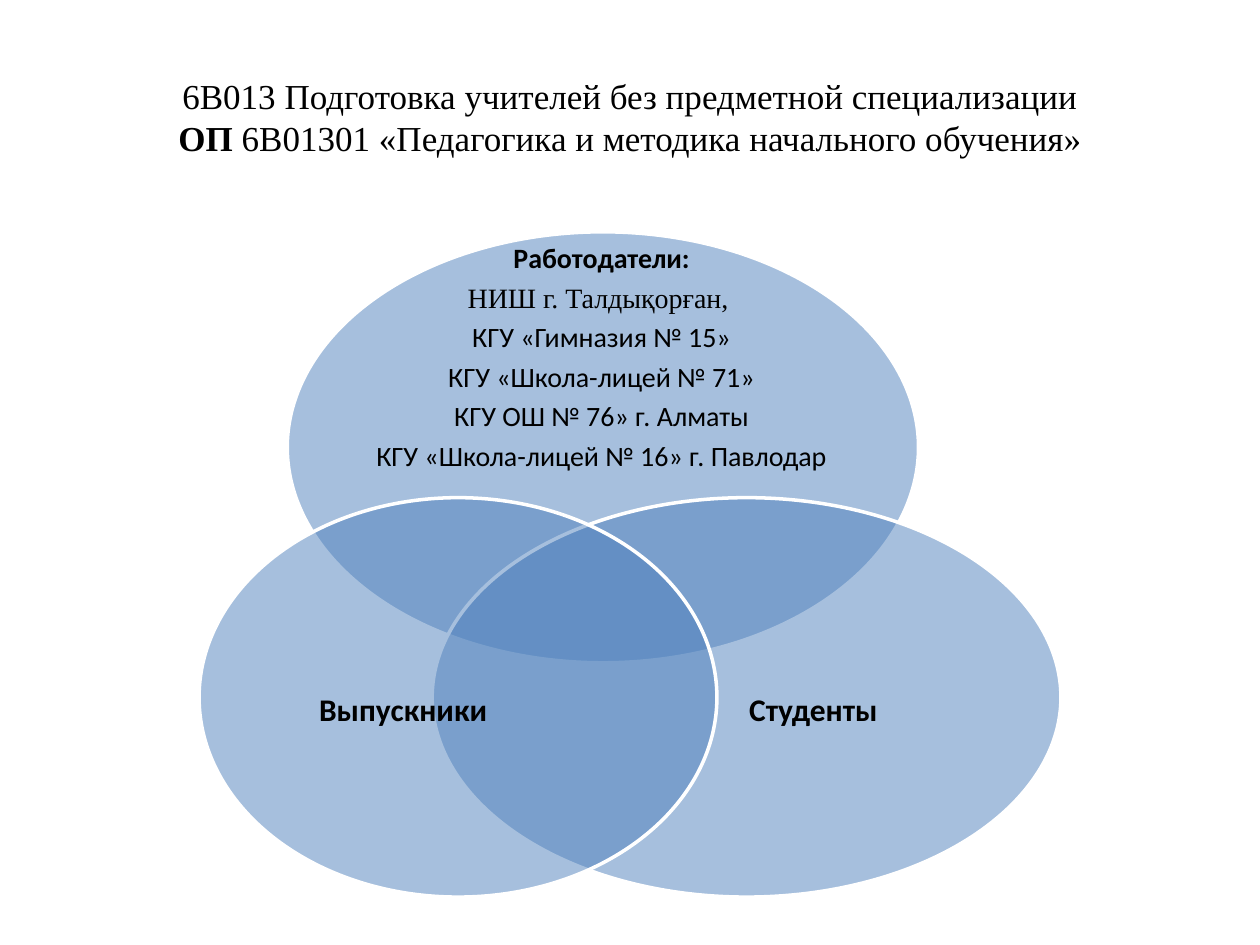
import pptx
import pptx.util
import pptx.dml.color
import pptx.enum.shapes
import pptx.enum.text
import pptx.oxml
from dataclasses import dataclass
from pptx.oxml import ns

PX = 9144  # EMU per px, 100 px to the inch
MIDDLE = pptx.enum.text.MSO_ANCHOR.MIDDLE
TOP = pptx.enum.text.MSO_ANCHOR.TOP


@dataclass(frozen=True)
class Theme:
    text: str = "000000"
    circle: str = "4F81BD"
    outline: str = "FFFFFF"
    opacity: int = 50
    outline_pt: int = 2
    title_font: str = "Times New Roman"
    body_font: str = "Calibri"
    title_pt: int = 20
    list_pt: int = 16
    label_pt: int = 18
    line_spacing: float = 0.9
    space_after_pt: float = 5.3


THEME = Theme()

EMPLOYERS = [
    ("Работодатели:", THEME.body_font, True),
    ("НИШ г. Талдықорған, ", THEME.title_font, False),
    ("КГУ «Гимназия № 15»", THEME.body_font, False),
    ("КГУ «Школа-лицей № 71»", THEME.body_font, False),
    ("КГУ ОШ № 76» г. Алматы", THEME.body_font, False),
    ("КГУ «Школа-лицей № 16» г. Павлодар", THEME.body_font, False),
]

# Circle box, text box relative to it, lines, size, anchor; back to front
CIRCLES = [
    ((228, 184, 501, 342), (66, 10, 367, 190), EMPLOYERS, THEME.list_pt, TOP),
    ((343, 395, 499, 317), (153, 82, 299, 175),
     [("Студенты", THEME.body_font, True)], THEME.label_pt, MIDDLE),
    ((158, 395, 411, 317), (39, 82, 246, 175),
     [("Выпускники", THEME.body_font, True)], THEME.label_pt, MIDDLE),
]


def emu(box):
    return [v * PX for v in box]


def rgb(value):
    return pptx.dml.color.RGBColor.from_string(value)


def style_run(r, font, size, bold):
    r.font.name = font
    r.font.size = pptx.util.Pt(size)
    r.font.bold = bold
    r.font.color.rgb = rgb(THEME.text)


def add_text_frame(s, box, anchor):
    tf = s.shapes.add_textbox(*emu(box)).text_frame
    tf.word_wrap = True
    tf.vertical_anchor = anchor
    tf.margin_left = tf.margin_right = tf.margin_top = tf.margin_bottom = 0
    return tf


def add_title(s, box):
    tf = add_text_frame(s, box, MIDDLE)
    p = tf.paragraphs[0]
    p.alignment = pptx.enum.text.PP_ALIGN.CENTER
    p.add_run().text = "6В013 Подготовка учителей без предметной специализации"
    p.add_line_break()
    p.add_run().text = "ОП "
    p.add_run().text = "6В01301 «Педагогика и методика начального обучения»"
    for r in p.runs:
        style_run(r, THEME.title_font, THEME.title_pt, r.text == "ОП ")


def add_circle(s, box, text_box, lines, size, anchor):
    """Translucent ellipse with a text box placed relative to its corner."""
    sp = s.shapes.add_shape(pptx.enum.shapes.MSO_SHAPE.OVAL, *emu(box))
    sp.shadow.inherit = False
    sp.fill.solid()
    sp.fill.fore_color.rgb = rgb(THEME.circle)
    color = sp.fill._xPr.find(".//" + ns.qn("a:srgbClr"))
    alpha = pptx.oxml.parse_xml(
        f'<a:alpha {ns.nsdecls("a")} val="{THEME.opacity * 1000}"/>')
    color.append(alpha)
    sp.line.color.rgb = rgb(THEME.outline)
    sp.line.width = pptx.util.Pt(THEME.outline_pt)

    left, top, width, height = text_box
    tf = add_text_frame(s, (box[0] + left, box[1] + top, width, height), anchor)
    tf.text = "\n".join(text for text, _, _ in lines)
    for p, (_, font, bold) in zip(tf.paragraphs, lines):
        p.alignment = pptx.enum.text.PP_ALIGN.CENTER
        p.line_spacing = THEME.line_spacing
        p.space_after = pptx.util.Pt(THEME.space_after_pt)
        style_run(p.runs[0], font, size, bold)


def main():
    prs = pptx.Presentation()
    prs.slide_width, prs.slide_height = emu((1000, 750))
    s = prs.slides.add_slide(prs.slide_layouts[6])
    add_title(s, (50, 30, 900, 125))
    for circle in CIRCLES:
        add_circle(s, *circle)
    prs.save("out.pptx")


if __name__ == "__main__":
    main()
